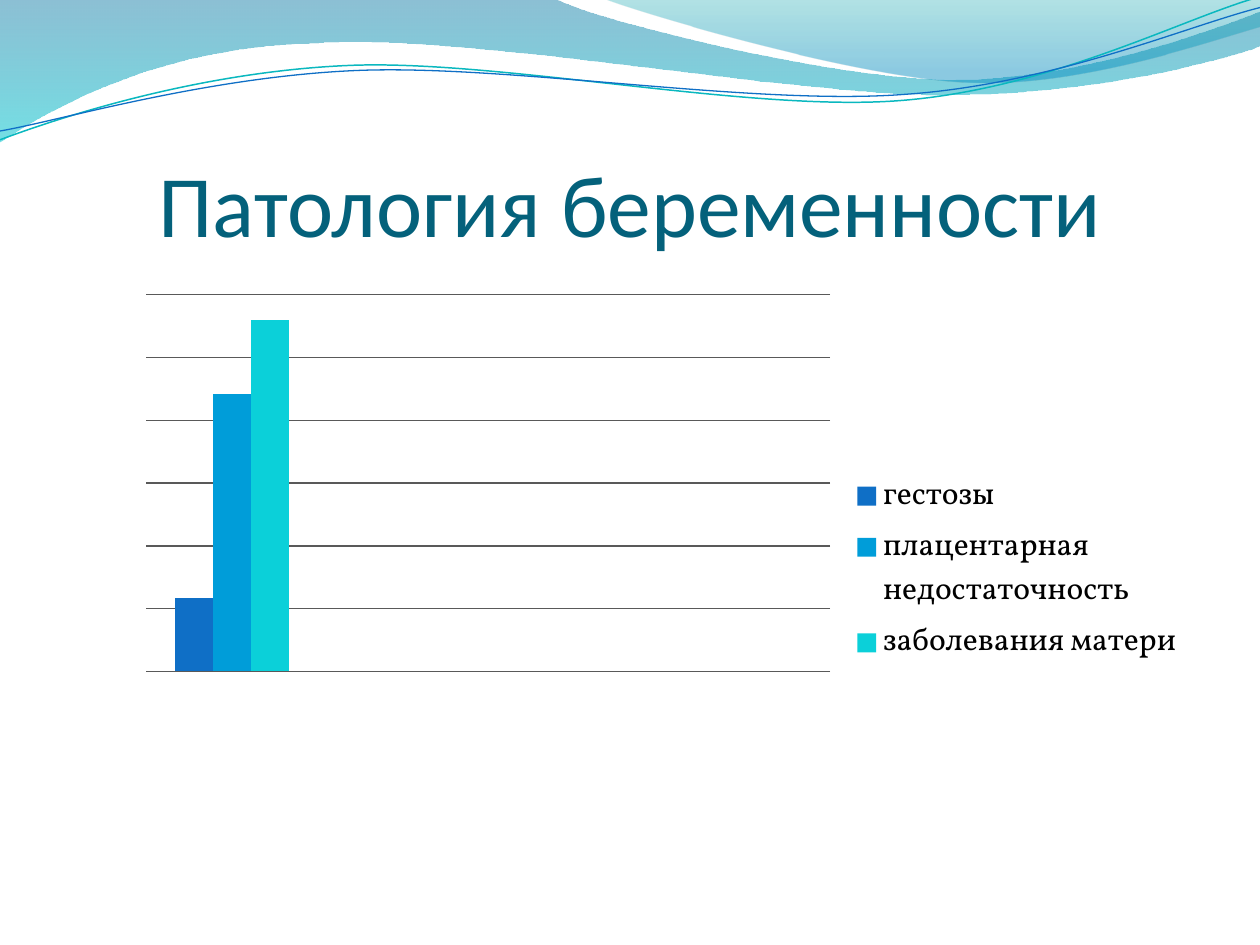
import pptx
import pptx.chart.data
import pptx.dml.color
import pptx.enum.chart
import pptx.enum.text
import pptx.oxml
import pptx.oxml.ns
import pptx.util
from lxml import etree
from pptx.oxml.ns import qn
from pptx.util import Inches

CHART_WIDTH, CHART_HEIGHT = 9, 4.8

# Each outline: start point, then segments of one point (line) or three (Bezier).
WAVE_BAND = [
    [(0, 0)], [(4.4, -0.01)],
    [(4.76, 0.17), (6.64, 0.63), (7.58, 0.63)],
    [(8.53, 0.63), (9.58, 0.26), (10, 0.09)],
    [(10.01, 0.36)],
    [(9.83, 0.44), (8.7, 0.76), (7.46, 0.75)],
    [(6.22, 0.75), (3.82, 0.28), (2.57, 0.34)],
    [(1.29, 0.36), (0.46, 0.83), (-0.01, 1.13)],
    [(0, 0)],
]
WAVE_CREST = [
    [(4.79, -0.01)],
    [(5.09, 0.11), (6.82, 0.62), (7.69, 0.65)],
    [(8.56, 0.69), (9.61, 0.32), (10, 0.21)],
    [(10, 0)], [(4.79, -0.01)],
]
TEAL_LINE = [
    [(0, 1.11)],
    [(0.48, 0.93), (1.58, 0.57), (2.77, 0.52)],
    [(3.95, 0.47), (5.93, 0.89), (7.13, 0.8)],
    [(8.33, 0.71), (9.38, 0.15), (9.98, -0.02)],
]
BLUE_LINE = [
    [(0, 1.04)],
    [(0.47, 0.96), (1.64, 0.61), (2.83, 0.56)],
    [(4.03, 0.51), (5.97, 0.84), (7.17, 0.75)],
    [(8.36, 0.67), (9.41, 0.21), (10, 0.06)],
]
SERIES = [
    ("гестозы", 21, "0F6FC6"),
    ("плацентарная недостаточность", 79, "009DD9"),
    ("заболевания матери", 100, "0BD0D9"),
]


def rgb(color):
    return pptx.dml.color.RGBColor.from_string(color)


def add_outline(slide, outline, close):
    """Build a freeform through all points, then bend three-point segments."""
    points = [(Inches(x), Inches(y)) for segment in outline for x, y in segment]
    builder = slide.shapes.build_freeform(*points[0])
    builder.add_line_segments(points[1:], close=close)
    s = builder.convert_to_shape()
    s.shadow.inherit = False
    lines = iter(list(s.element.spPr.iter(qn("a:lnTo"))))
    for segment in outline[1:]:
        steps = [next(lines) for _ in segment]
        if len(steps) == 3:
            curve = etree.Element(qn("a:cubicBezTo"))
            steps[0].addprevious(curve)
            for step in steps:
                curve.append(step[0])
                step.getparent().remove(step)
    return s


def add_wave(slide, outline, stops):
    """Filled wave; each stop is (position, colour, opacity percent)."""
    s = add_outline(slide, outline, True)
    s.line.fill.background()
    s.fill.gradient()
    s.fill.gradient_angle = 270
    for stop, (position, color, _) in zip(s.fill.gradient_stops, stops):
        stop.position = position
        stop.color.rgb = rgb(color)
    for clr, (_, _, opacity) in zip(s.element.spPr.iter(qn("a:srgbClr")), stops):
        etree.SubElement(clr, qn("a:alpha"), val=str(opacity * 1000))


def add_wave_line(slide, outline, color, width):
    s = add_outline(slide, outline, False)
    s.fill.background()
    s.line.color.rgb = rgb(color)
    s.line.width = pptx.util.Pt(width)


def add_title(slide, text):
    tf = slide.shapes.add_textbox(Inches(0.5), Inches(0.77), Inches(9), Inches(1.25)).text_frame
    tf.word_wrap = True
    tf.vertical_anchor = pptx.enum.text.MSO_ANCHOR.BOTTOM
    tf.margin_left = tf.margin_right = tf.margin_bottom = 0
    p = tf.paragraphs[0]
    p.text = text
    p.alignment = pptx.enum.text.PP_ALIGN.CENTER
    p.font.name = "Calibri"
    p.font.size = pptx.util.Pt(50)
    p.font.color.rgb = rgb("04617B")


def set_layout(parent, before, x, y, w, h, inner=False):
    """Place a chart part, given in inches inside the chart."""
    for old in parent.findall(qn("c:layout")):
        parent.remove(old)
    target = '<c:layoutTarget val="inner"/>' if inner else ""
    parts = (x / CHART_WIDTH, y / CHART_HEIGHT, w / CHART_WIDTH, h / CHART_HEIGHT)
    values = "".join(f'<c:{key} val="{part:.4f}"/>' for key, part in zip("xywh", parts))
    layout = pptx.oxml.parse_xml(
        f'<c:layout {pptx.oxml.ns.nsdecls("c")}><c:manualLayout>{target}'
        f'<c:xMode val="edge"/><c:yMode val="edge"/>{values}</c:manualLayout></c:layout>')
    parent.find(qn(before)).addprevious(layout)


def add_chart(slide):
    data = pptx.chart.data.CategoryChartData()
    data.categories = ["1"]
    for name, value, _ in SERIES:
        data.add_series(name, [value, None, None, None])
    chart = slide.shapes.add_chart(
        pptx.enum.chart.XL_CHART_TYPE.COLUMN_CLUSTERED, Inches(0.5), Inches(2.12),
        Inches(CHART_WIDTH), Inches(CHART_HEIGHT), data).chart
    chart.has_title = False
    chart.font.name = "Vollkorn"
    chart.font.size = pptx.util.Pt(18)
    chart.font.color.rgb = rgb("000000")

    plot = chart.plots[0]
    plot.gap_width = 150
    plot.overlap = 0
    plot.vary_by_categories = False
    for series, (_, _, color) in zip(plot.series, SERIES):
        series.format.fill.solid()
        series.format.fill.fore_color.rgb = rgb(color)

    chart.category_axis.visible = False
    axis = chart.value_axis
    axis.visible = False
    axis.minimum_scale = 0
    axis.maximum_scale = 107.1
    axis.major_unit = 17.85
    axis.has_major_gridlines = True
    axis.major_gridlines.format.line.color.rgb = rgb("595959")
    axis.major_gridlines.format.line.width = pptx.util.Pt(0.75)

    chart.has_legend = True
    legend = chart.legend
    legend.position = pptx.enum.chart.XL_LEGEND_POSITION.RIGHT
    legend.include_in_layout = True
    plot_area = chart.element.find(".//" + qn("c:plotArea"))
    legend_area = chart.element.find(".//" + qn("c:legend"))
    set_layout(plot_area, "c:barChart", 0.66, 0.22, 5.43, 2.99, inner=True)
    set_layout(legend_area, "c:overlay", 6.22, 1.59, 2.7, 1.62)


def main():
    prs = pptx.Presentation()
    prs.slide_width, prs.slide_height = Inches(10), Inches(7.5)
    slide = prs.slides.add_slide(prs.slide_layouts[6])
    add_wave(slide, WAVE_BAND, [(0, "0074A1", 45), (1, "00C6CF", 55)])
    add_wave(slide, WAVE_CREST, [(0, "00A1A9", 30), (0.8, "008BBF", 45)])
    add_wave_line(slide, TEAL_LINE, "0AB8BF", 0.85)
    add_wave_line(slide, BLUE_LINE, "0F6FC6", 0.75)
    add_title(slide, "Патология беременности")
    add_chart(slide)
    prs.save("out.pptx")


if __name__ == "__main__":
    main()
